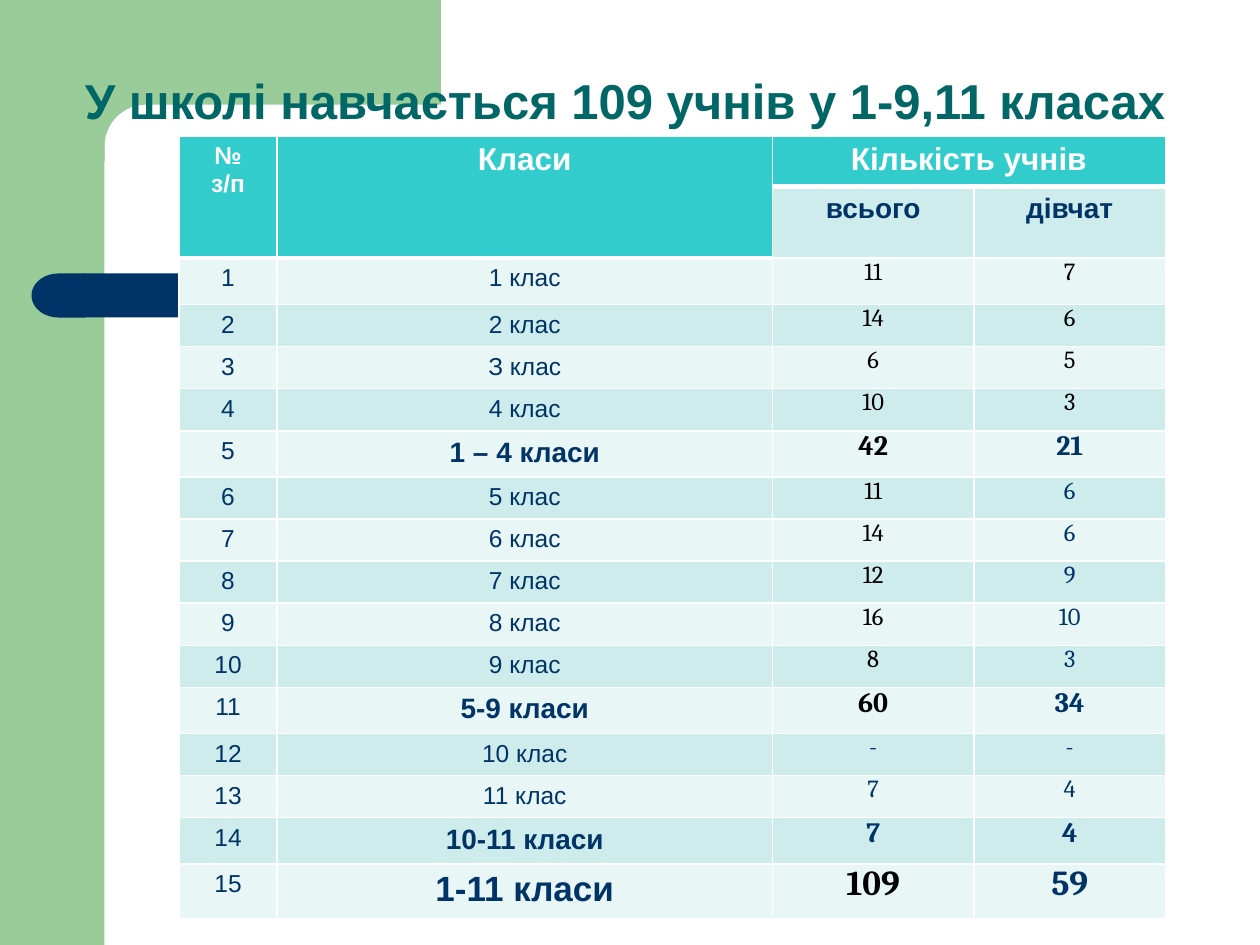
from dataclasses import dataclass
from math import cos, pi, sin

from lxml.etree import SubElement
from pptx import Presentation
from pptx.dml.color import RGBColor
from pptx.enum.shapes import MSO_SHAPE
from pptx.enum.text import MSO_ANCHOR, PP_ALIGN
from pptx.oxml.ns import qn
from pptx.util import Inches, Pt


@dataclass(frozen=True)
class Theme:
    green: str = "99CC99"
    navy: str = "003366"
    teal: str = "006666"
    header: str = "33CCCC"
    bands: tuple = ("E8F6F6", "CEECEC")
    white: str = "FFFFFF"
    black: str = "000000"
    sans: str = "Arial"
    serif: str = "Cambria"
    title: int = 28
    grand: int = 20
    head: int = 18
    subtotal: int = 16
    body: int = 14


T = Theme()


def write(tf, text, size, color, font=T.sans, bold=False):
    """Fill a text frame with centred paragraphs, one per line of text."""
    tf.text = text
    for p in tf.paragraphs:
        p.alignment = PP_ALIGN.CENTER
        f = p.runs[0].font
        for name, value in {"size": Pt(size), "name": font, "bold": bold}.items():
            setattr(f, name, value)
        f.color.rgb = RGBColor.from_string(color)


def set_borders(cell, widths):
    """Draw white cell edges; widths maps L, R, T, B to points."""
    tcPr = cell._tc.get_or_add_tcPr()
    for i, (side, width) in enumerate(widths.items()):
        ln = SubElement(tcPr, qn(f"a:ln{side}"), w=str(Pt(width)))
        fill = SubElement(ln, qn("a:solidFill"))
        SubElement(fill, qn("a:srgbClr"), val=T.white)
        tcPr.insert(i, ln)


prs = Presentation()
prs.slide_width, prs.slide_height = Inches(10), Inches(7.5)
s = prs.slides.add_slide(prs.slide_layouts[6])

# Background decoration: side band, top band with a rounded inner corner, navy bar
side_band = s.shapes.add_shape(MSO_SHAPE.RECTANGLE, 0, 0, Inches(0.83), Inches(7.5))

radius, steps = 0.33, 12
angles = [pi / 2 * i / steps for i in range(steps + 1)]
corner = [(1.16 - radius * sin(a), 1.16 - radius * cos(a)) for a in angles]
outline = [(3.5, 0), (3.5, 0.83), *corner, (0.83, 1.28), (0.5, 1.28)]
fb = s.shapes.build_freeform(Inches(0.5), 0)
fb.add_line_segments([(Inches(x), Inches(y)) for x, y in outline])
top_band = fb.convert_to_shape()

bar = s.shapes.add_shape(
    MSO_SHAPE.RECTANGLE, Inches(0.67), Inches(2.17), Inches(7.67), Inches(0.35))
bar_end = s.shapes.add_shape(
    MSO_SHAPE.FLOWCHART_DELAY, Inches(0.25), Inches(2.17), Inches(0.43), Inches(0.35))
bar_end.rotation = 180

for sp, color in ((side_band, T.green), (top_band, T.green), (bar, T.navy), (bar_end, T.navy)):
    sp.shadow.inherit = False
    sp.fill.solid()
    sp.fill.fore_color.rgb = RGBColor.from_string(color)
    sp.line.fill.background()

# Title
title = s.shapes.add_textbox(Inches(0.42), Inches(0.33), Inches(9.08), Inches(0.75))
tf = title.text_frame
tf.word_wrap = True
tf.vertical_anchor = MSO_ANCHOR.BOTTOM
write(tf, "У школі навчається 109 учнів у 1-9,11 класах", T.title, T.teal, bold=True)
tf.paragraphs[0].line_spacing = 0.9

# Class table: name, pupils, girls, text size
classes = [
    ("1 клас", "11", "7", T.body),
    ("2 клас", "14", "6", T.body),
    ("З клас", "6", "5", T.body),
    ("4 клас", "10", "3", T.body),
    ("1 – 4 класи", "42", "21", T.subtotal),
    ("5 клас", "11", "6", T.body),
    ("6 клас", "14", "6", T.body),
    ("7 клас", "12", "9", T.body),
    ("8 клас", "16", "10", T.body),
    ("9 клас", "8", "3", T.body),
    ("5-9 класи", "60", "34", T.subtotal),
    ("10 клас", "-", "-", T.body),
    ("11 клас", "7", "4", T.body),
    ("10-11 класи", "7", "4", T.subtotal),
    ("1-11 класи", "109", "59", T.grand),
]
row_height = {T.body: 0.33, T.subtotal: 0.35, T.grand: 0.42}
heights = [0.39, 0.53, 0.37] + [row_height[row[3]] for row in classes[1:]]
widths = [0.78, 3.93, 1.6, 1.52]

table = s.shapes.add_table(
    len(heights), len(widths), Inches(1.42), Inches(1.08),
    Inches(sum(widths)), Inches(sum(heights))).table
for col, width in zip(table.columns, widths):
    col.width = Inches(width)
for row, height in zip(table.rows, heights):
    row.height = Inches(height)

header_cells = {(0, 0), (0, 1), (0, 2), (0, 3), (1, 0), (1, 1)}
for r in range(len(heights)):
    for c in range(len(widths)):
        cell = table.cell(r, c)
        color = T.header if (r, c) in header_cells else T.bands[r % 2]
        cell.fill.solid()
        cell.fill.fore_color.rgb = RGBColor.from_string(color)
        set_borders(cell, {
            "L": 1, "R": 1,
            "T": 3 if (r - 1, c) in header_cells else 1,
            "B": 3 if (r, c) in header_cells else 1})

for first, last in (((0, 0), (1, 0)), ((0, 1), (1, 1)), ((0, 2), (0, 3))):
    table.cell(*first).merge(table.cell(*last))

for r, c, text, size, color in (
    (0, 0, "№\nз/п", T.body, T.white),
    (0, 1, "Класи", T.head, T.white),
    (0, 2, "Кількість учнів", T.head, T.white),
    (1, 2, "всього", T.subtotal, T.navy),
    (1, 3, "дівчат", T.subtotal, T.navy),
):
    write(table.cell(r, c).text_frame, text, size, color, bold=True)

navy_totals = (12, 13, 14)
for number, (name, pupils, girls, size) in enumerate(classes, start=1):
    r = number + 1
    bold = size > T.body
    write(table.cell(r, 0).text_frame, str(number), T.body, T.navy)
    write(table.cell(r, 1).text_frame, name, size, T.navy, bold=bold)
    pupils_color = T.navy if number in navy_totals else T.black
    girls_color = T.black if number <= 4 else T.navy
    for c, count, color in ((2, pupils, pupils_color), (3, girls, girls_color)):
        cell = table.cell(r, c)
        for side, inset in {"left": 0.07, "top": 0, "right": 0.07, "bottom": 0}.items():
            setattr(cell, f"margin_{side}", Inches(inset))
        write(cell.text_frame, count, size, color, T.serif, bold)

prs.save("out.pptx")
